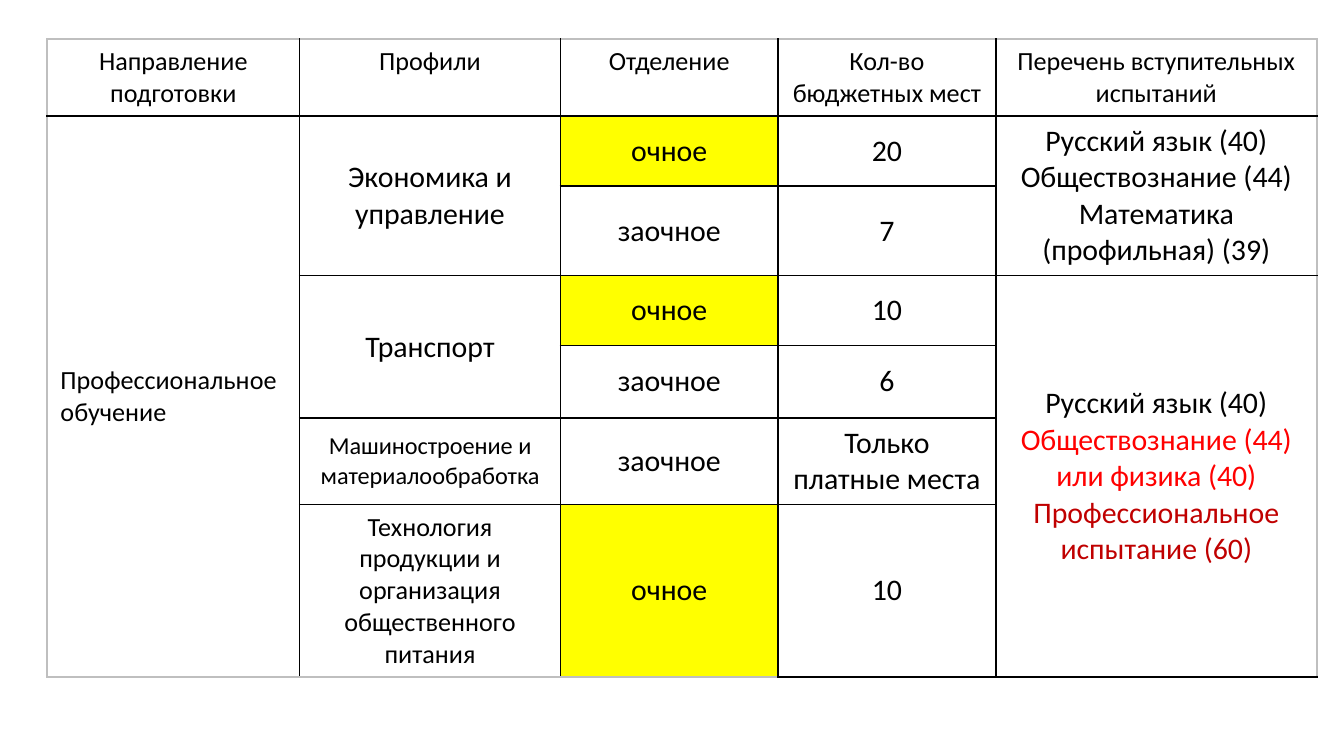
from lxml import etree
from pptx import Presentation
from pptx.dml.color import RGBColor
from pptx.enum.text import MSO_ANCHOR, PP_ALIGN
from pptx.oxml.ns import qn
from pptx.util import Inches, Pt

BLACK, GREY, YELLOW = "000000", "BFBFBF", "FFFF00"


def rgb(color):
    return RGBColor.from_string(color)


def add_border(cell, side, color):
    ln = etree.SubElement(cell._tc.get_or_add_tcPr(), qn(f"a:ln{side}"), w=str(Pt(1)))
    fill = etree.SubElement(ln, qn("a:solidFill"))
    etree.SubElement(fill, qn("a:srgbClr"), val=color)


# 16:9 slide
prs = Presentation()
prs.slide_width = Inches(10)
prs.slide_height = Inches(10) * 9 // 16
s = prs.slides.add_slide(prs.slide_layouts[6])

# Table grid: rows grow with their text to fill the frame
widths = [1.88, 1.94, 1.62, 1.62, 2.39]
heights = [0.52, 0.52, 0.52, 0.52, 0.54, 0.54, 0.16]
n_rows, n_cols = len(heights), len(widths)
frame = s.shapes.add_table(n_rows, n_cols, Inches(0.35), Inches(0.29),
                           Inches(9.45), Inches(4.69))
table = frame.table
table.first_row = table.horz_banding = False
for col, width in zip(table.columns, widths):
    col.width = Inches(width)
for row, height in zip(table.rows, heights):
    row.height = Inches(height)
frame.width, frame.height = Inches(9.45), Inches(4.69)

# Borders and fills: grey outside, black inside and under the last two columns
for i in range(n_rows):
    for j in range(n_cols):
        cell = table.cell(i, j)
        grey_bottom = (i == n_rows - 1 and j < 3) or (i > 0 and j == 0)
        add_border(cell, "L", GREY if j == 0 else BLACK)
        add_border(cell, "R", GREY if j == n_cols - 1 else BLACK)
        add_border(cell, "T", GREY if i == 0 else BLACK)
        add_border(cell, "B", GREY if grey_bottom else BLACK)
        cell.fill.background()

# Merged cells: first row, column, last row
for top, col, bottom in [(1, 0, 6), (1, 1, 2), (1, 4, 2), (3, 1, 4), (3, 4, 6)]:
    table.cell(top, col).merge(table.cell(bottom, col))

# Cell contents: None marks a cell covered by a merge
rows = [
    ["Направление подготовки", "Профили", "Отделение", "Кол-во бюджетных мест",
     "Перечень вступительных испытаний"],
    ["Профессиональное обучение", "Экономика и управление", "очное", "20",
     "Русский язык (40)\nОбществознание (44)\nМатематика (профильная) (39)"],
    [None, None, "заочное", "7", None],
    [None, "Транспорт", "очное", "10",
     "Русский язык (40)\nОбществознание (44) или физика (40)\n"
     "Профессиональное испытание (60)"],
    [None, None, "заочное", "6", None],
    [None, "Машиностроение и материалообработка", "заочное", "Только платные места", None],
    [None, "Технология продукции и организация общественного питания", "очное", "10", None],
]
sizes = {(1, 0): 14, (5, 1): 13, (6, 1): 14}
exam_colors = [BLACK, "FF0000", "C00000"]

for i, row in enumerate(rows):
    for j, text in enumerate(row):
        if text is None:
            continue
        cell = table.cell(i, j)
        cell.vertical_anchor = MSO_ANCHOR.TOP if i == 0 else MSO_ANCHOR.MIDDLE
        if text == "очное":
            cell.fill.solid()
            cell.fill.fore_color.rgb = rgb(YELLOW)
        tf = cell.text_frame
        tf.text = text
        for k, p in enumerate(tf.paragraphs):
            p.alignment = PP_ALIGN.LEFT if (i, j) == (1, 0) else PP_ALIGN.CENTER
            font = p.runs[0].font
            font.name = "Calibri"
            font.size = Pt(14 if i == 0 else sizes.get((i, j), 16))
            font.bold = False
            font.color.rgb = rgb(exam_colors[k] if (i, j) == (3, 4) else BLACK)

prs.save("out.pptx")
